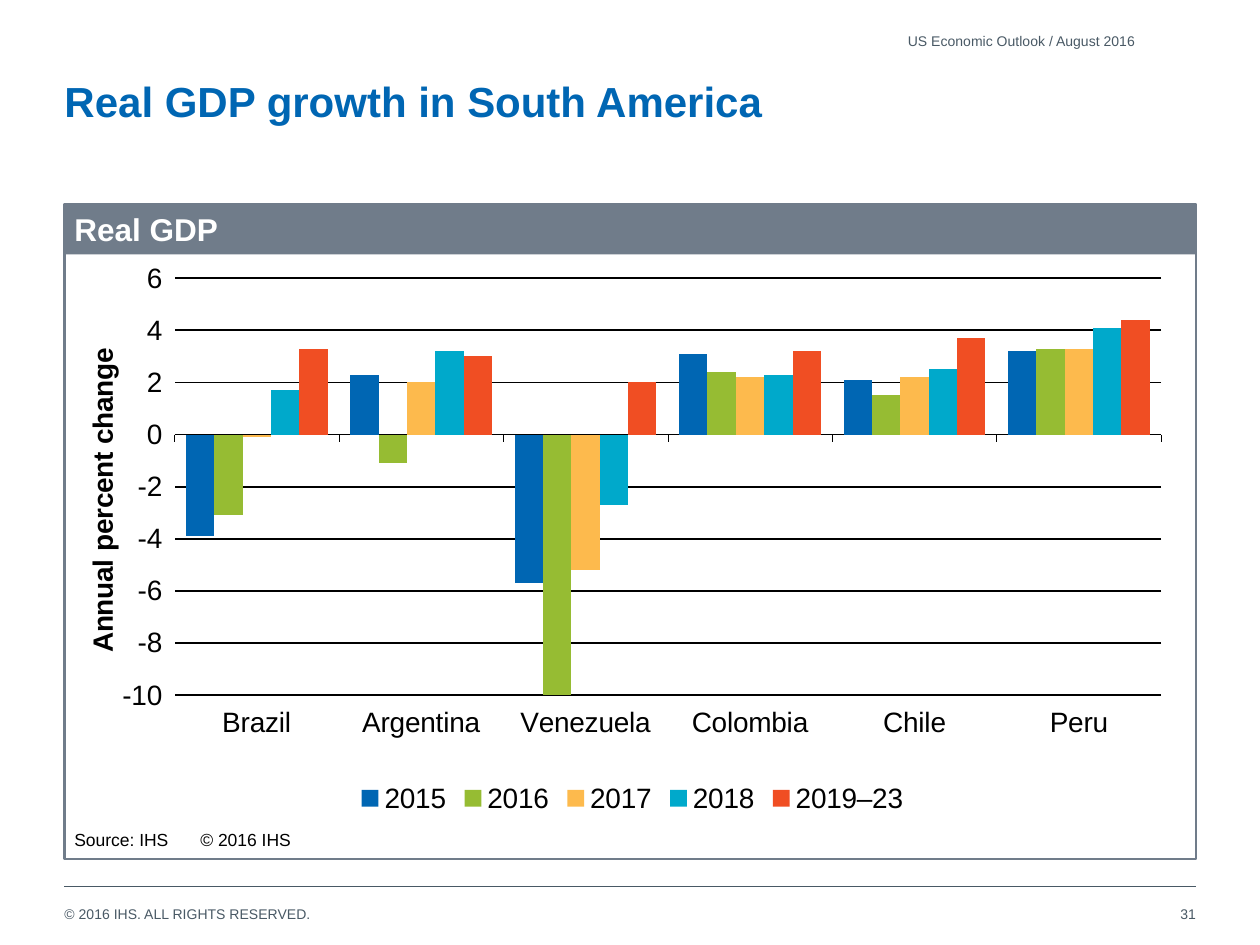
import pptx
import pptx.chart.data
import pptx.dml.color
import pptx.enum.chart
import pptx.enum.shapes
import pptx.enum.text
import pptx.oxml
import pptx.oxml.ns
import pptx.util
from lxml import etree
from pptx.util import Cm, Pt

# Content
TITLE = "Real GDP growth in South America"
REPORT = "US Economic Outlook / August 2016"
PANEL_HEADING = "Real GDP"
SOURCE = "Source: IHS\t© 2016 IHS"
COPYRIGHT = "© 2016 IHS. ALL RIGHTS RESERVED."
PAGE_NUMBER = "31"
AXIS_TITLE = "Annual percent change"
COUNTRIES = ["Brazil", "Argentina", "Venezuela", "Colombia", "Chile", "Peru"]
GROWTH = [
    ("2015", "0066B3", [-3.9, 2.3, -5.7, 3.1, 2.1, 3.2]),
    ("2016", "96BC33", [-3.1, -1.1, -11.2, 2.4, 1.5, 3.3]),
    ("2017", "FDBA4D", [-0.1, 2, -5.2, 2.2, 2.2, 3.3]),
    ("2018", "00A9CB", [1.7, 3.2, -2.7, 2.3, 2.5, 4.1]),
    ("2019–23", "F04E23", [3.3, 3, 2, 3.2, 3.7, 4.4]),
]
PLOT_AREA = {"x": 0.086, "y": 0.042, "w": 0.892, "h": 0.739}

# Style and grid, in centimetres
FONT = "Arial"
BLUE, SLATE, GREY, BLACK, WHITE = "0066B3", "495965", "707C8A", "000000", "FFFFFF"
LEFT, WIDTH = 1.3, 22.81
RIGHT = LEFT + WIDTH
PANEL_TOP, PANEL_HEIGHT, HEADING_HEIGHT, SOURCE_HEIGHT = 4.11, 13.21, 1.02, 0.79
TOP = pptx.enum.text.MSO_ANCHOR.TOP
MIDDLE = pptx.enum.text.MSO_ANCHOR.MIDDLE
ALIGN_LEFT = pptx.enum.text.PP_ALIGN.LEFT
ALIGN_RIGHT = pptx.enum.text.PP_ALIGN.RIGHT


def rgb(code):
    return pptx.dml.color.RGBColor.from_string(code)


def set_font(font, size, color, bold=False):
    font.name, font.size, font.bold = FONT, Pt(size), bold
    font.color.rgb = rgb(color)


def set_line(line, color, width):
    line.color.rgb = rgb(color)
    line.width = Pt(width)


def write(shape, text, size, color, bold=False, align=ALIGN_LEFT,
          anchor=MIDDLE, inset=(0, 0)):
    frame = shape.text_frame
    frame.word_wrap = True
    frame.auto_size = pptx.enum.text.MSO_AUTO_SIZE.NONE
    frame.vertical_anchor = anchor
    frame.margin_left = frame.margin_right = Cm(inset[0])
    frame.margin_top = frame.margin_bottom = Cm(inset[1])
    frame.text = text
    paragraph = frame.paragraphs[0]
    paragraph.alignment = align
    for run in paragraph.runs:
        set_font(run.font, size, color, bold)
    return paragraph


def add_text(slide, box, *args, **kwargs):
    return write(slide.shapes.add_textbox(*map(Cm, box)), *args, **kwargs)


def add_panel(slide, height):
    panel = slide.shapes.add_shape(
        pptx.enum.shapes.MSO_SHAPE.RECTANGLE,
        Cm(LEFT), Cm(PANEL_TOP), Cm(WIDTH), Cm(height))
    panel.shadow.inherit = False
    return panel


def add_growth_chart(slide):
    data = pptx.chart.data.CategoryChartData(number_format="0.0")
    data.categories = COUNTRIES
    for period, _, values in GROWTH:
        data.add_series(period, values)
    chart = slide.shapes.add_chart(
        pptx.enum.chart.XL_CHART_TYPE.COLUMN_CLUSTERED,
        Cm(1.6), Cm(5.13), Cm(22.3), Cm(11.38), data).chart
    set_font(chart.font, 16, BLACK)
    chart.has_title = False
    chart.has_legend = True
    chart.legend.position = pptx.enum.chart.XL_LEGEND_POSITION.BOTTOM
    chart.legend.include_in_layout = False

    # Columns
    plot = chart.plots[0]
    plot.gap_width, plot.overlap = 80, 0
    plot.vary_by_categories = False
    for series, (_, color, _) in zip(plot.series, GROWTH):
        series.invert_if_negative = False
        series.format.fill.solid()
        series.format.fill.fore_color.rgb = rgb(color)

    # Axes
    countries, percent = chart.category_axis, chart.value_axis
    countries.tick_label_position = pptx.enum.chart.XL_TICK_LABEL_POSITION.LOW
    set_line(countries.format.line, BLACK, 0.25)
    percent.minimum_scale, percent.maximum_scale, percent.major_unit = -10, 6, 2
    percent.tick_labels.number_format = "0"
    percent.tick_labels.number_format_is_linked = False
    percent.format.line.fill.background()
    percent.has_major_gridlines = True
    set_line(percent.major_gridlines.format.line, BLACK, 1)
    heading = percent.axis_title.text_frame
    heading.text = AXIS_TITLE
    set_font(heading.paragraphs[0].runs[0].font, 16, BLACK, True)

    # Fixed inner plot area
    qn = pptx.oxml.ns.qn
    area = chart.element.find(".//" + qn("c:plotArea"))
    layout = area.find(qn("c:layout"))
    if layout is None:
        layout = etree.Element(qn("c:layout"))
        area.insert(0, layout)
    manual = etree.SubElement(layout, qn("c:manualLayout"))
    settings = [("layoutTarget", "inner"), ("xMode", "edge"), ("yMode", "edge")]
    for tag, value in settings + list(PLOT_AREA.items()):
        etree.SubElement(manual, qn("c:" + tag)).set("val", str(value))


def main():
    deck = pptx.Presentation()
    deck.slide_width, deck.slide_height = Cm(25.4), Cm(19.05)
    slide = deck.slides.add_slide(deck.slide_layouts[5])

    # Footer rule and copyright
    add_text(slide, (LEFT, 18.26, 17.4, 0.33), COPYRIGHT, 8, SLATE, anchor=TOP)
    rule = slide.shapes.add_connector(
        pptx.enum.shapes.MSO_CONNECTOR.STRAIGHT,
        Cm(LEFT), Cm(17.86), Cm(RIGHT), Cm(17.86))
    set_line(rule.line, SLATE, 0.5)
    etree.SubElement(rule.element.spPr, pptx.oxml.ns.qn("a:effectLst"))

    add_growth_chart(slide)

    # Title, page number and report name
    title = slide.shapes.title
    title.left, title.top, title.width, title.height = map(
        Cm, (LEFT, 1.52, WIDTH, 2.21))
    write(title, TITLE, 24, BLUE, True, anchor=TOP)
    add_text(slide, (RIGHT - 5.74, 17.91, 5.74, 1.02), PAGE_NUMBER, 8, SLATE,
             align=ALIGN_RIGHT)
    add_text(slide, (LEFT, 0.53, 21.59, 0.61), REPORT, 8, SLATE,
             align=ALIGN_RIGHT)

    # Panel heading and frame
    band = add_panel(slide, HEADING_HEIGHT)
    band.fill.solid()
    band.fill.fore_color.rgb = rgb(GREY)
    band.line.fill.background()
    write(band, PANEL_HEADING, 18, WHITE, True, inset=(0.2, 0.1))
    frame = add_panel(slide, PANEL_HEIGHT)
    frame.fill.background()
    set_line(frame.line, GREY, 1.5)

    # Source line, with a tab stop before the copyright
    source = add_text(
        slide,
        (LEFT, PANEL_TOP + PANEL_HEIGHT - SOURCE_HEIGHT, WIDTH, SOURCE_HEIGHT),
        SOURCE, 10, BLACK, inset=(0.2, 0.2))
    qn = pptx.oxml.ns.qn
    tabs = etree.SubElement(source._p.get_or_add_pPr(), qn("a:tabLst"))
    etree.SubElement(tabs, qn("a:tab"), pos=str(Cm(2.54)), algn="l")

    deck.save("out.pptx")


if __name__ == "__main__":
    main()
